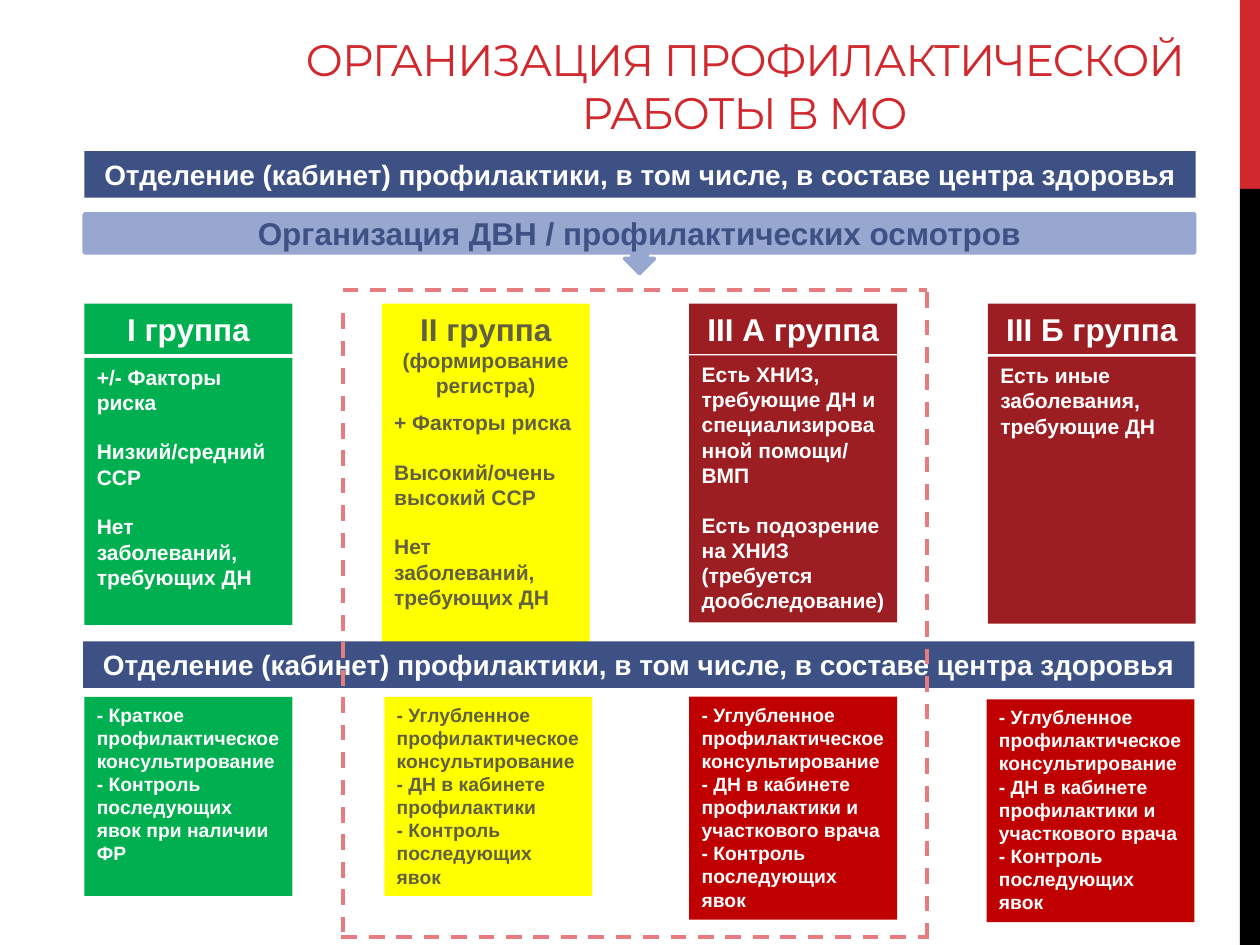
"""Builds a slide on preventive work: four patient groups and their follow-up."""
from pptx import Presentation
from pptx import util as u
from pptx.dml.color import RGBColor
from pptx.enum import dml, shapes, text
from pptx.oxml import ns
from lxml import etree

COLORS = {
    "red": "D1282E", "black": "000000", "white": "FFFFFF", "navy": "3D5185",
    "blue": "97A7D0", "green": "00B050", "yellow": "FFFF00", "olive": "616042",
    "maroon": "9D1E22", "crimson": "C00000", "pink": "E67C7F",
}
DEPARTMENT = "Отделение (кабинет) профилактики, в том числе, в составе центра здоровья"
IN_DEPTH = "- Углубленное профилактическое консультирование"
FOLLOW_UP = "- Контроль последующих явок"
DOCTOR_CARE = [IN_DEPTH, "- ДН в кабинете профилактики и участкового врача", FOLLOW_UP]
CARD_WIDTH = 1.65
GROUPS = [
    {"left": 0.67, "fill": "green", "color": "white",
     "head": [("I группа", 18)], "head_height": 0.4,
     "top": 2.84,
     "signs": ["+/- Факторы риска", "Низкий/средний ССР", "Нет заболеваний, требующих ДН"],
     "care_at": (0.67, 5.53, 1.58), "care_fill": "green",
     "care": ["- Краткое профилактическое консультирование",
              "- Контроль последующих явок при наличии ФР"]},
    {"left": 3.03, "fill": "yellow", "color": "olive",
     "head": [("II группа ", 18), ("(формирование регистра)", 12)], "head_height": 0.81,
     "top": 3.2,
     "signs": ["+ Факторы риска", "Высокий/очень высокий ССР", "Нет заболеваний, требующих ДН"],
     "care_at": (3.05, 5.53, 1.58), "care_fill": "yellow",
     "care": [IN_DEPTH, "- ДН в кабинете профилактики", FOLLOW_UP]},
    {"left": 5.47, "fill": "maroon", "color": "white",
     "head": [("III А группа", 18)], "head_height": 0.4,
     "top": 2.82,
     "signs": ["Есть ХНИЗ, требующие ДН и специализированной помощи/ ВМП",
               "Есть подозрение на ХНИЗ (требуется дообследование)"],
     "care_at": (5.47, 5.53, 1.77), "care_fill": "crimson", "care": DOCTOR_CARE},
    {"left": 7.84, "fill": "maroon", "color": "white",
     "head": [("III Б группа", 18)], "head_height": 0.4,
     "top": 2.83,
     "signs": ["Есть иные заболевания, требующие ДН"],
     "care_at": (7.83, 5.55, 1.77), "care_fill": "crimson", "care": DOCTOR_CARE},
]
FRAME = [
    (7.36, 7.45, 7.36, 2.3), (2.72, 7.4, 2.72, 2.41),
    (2.72, 2.3, 7.36, 2.3), (2.71, 7.44, 7.36, 7.44),
]


def rgb(name):
    """Return the named colour."""
    return RGBColor.from_string(COLORS[name])


def write(box, paras, *, color, size=12, font="Arial", bold=True, align=None,
          anchor=text.MSO_ANCHOR.TOP, gap=0):
    """Fill a box with paragraphs, each a string or a list of (text, size) spans."""
    frame = box.text_frame
    frame.word_wrap = True
    frame.auto_size = text.MSO_AUTO_SIZE.NONE
    frame.vertical_anchor = anchor
    for number, content in enumerate(paras):
        para = frame.add_paragraph() if number else frame.paragraphs[0]
        para.alignment = align or text.PP_ALIGN.LEFT
        para.space_before = u.Pt(gap if number else 0)
        spans = [(content, size)] if isinstance(content, str) else content
        for words, points in spans:
            span = para.add_run()
            span.text = words
            span.font.name = font
            span.font.size = u.Pt(points)
            span.font.bold = bold
            span.font.color.rgb = rgb(color)


def add_box(page, left, top, width, height, fill, kind=shapes.MSO_SHAPE.RECTANGLE):
    """Add a flat filled shape without an outline."""
    box = page.shapes.add_shape(
        kind, u.Inches(left), u.Inches(top), u.Inches(width), u.Inches(height))
    box.shadow.inherit = False
    box.fill.solid()
    box.fill.fore_color.rgb = rgb(fill)
    box.line.fill.background()
    return box


def add_title(page):
    """Place and format the title."""
    title = page.shapes.title
    title.left, title.top = u.Inches(2.09), u.Inches(0.13)
    title.width, title.height = u.Inches(7.64), u.Inches(1.02)
    write(title, ["ОРГАНИЗАЦИЯ ПРОФИЛАКТИЧЕСКОЙ РАБОТЫ В МО"], color="red", size=25.2,
          font="Montserrat", bold=False, align=text.PP_ALIGN.CENTER,
          anchor=text.MSO_ANCHOR.BOTTOM)
    span = title.text_frame.paragraphs[0].runs[0]
    span.font._element.set("spc", "-60")


def add_bar(page, left, top):
    """Add a full-width bar naming the department."""
    bar = add_box(page, left, top, 8.82, 0.37, "navy")
    write(bar, [DEPARTMENT], color="white", size=16, align=text.PP_ALIGN.CENTER)


def add_group(page, group):
    """Add the heading and the signs of one patient group."""
    head = add_box(page, group["left"], 2.41, CARD_WIDTH, group["head_height"], group["fill"])
    write(head, [group["head"]], color=group["color"], align=text.PP_ALIGN.CENTER)
    card = add_box(page, group["left"], group["top"], CARD_WIDTH, 2.12, group["fill"])
    write(card, group["signs"], color=group["color"], gap=14)


def add_care(page, group):
    """Add the card with the care given to one patient group."""
    left, top, height = group["care_at"]
    card = add_box(page, left, top, CARD_WIDTH, height, group["care_fill"])
    write(card, group["care"], color=group["color"], size=11)


def add_dashed_line(page, *ends):
    """Add one dashed side of the frame."""
    line = page.shapes.add_connector(
        shapes.MSO_CONNECTOR.STRAIGHT, *[u.Inches(end) for end in ends])
    line.line.color.rgb = rgb("pink")
    line.line.width = u.Pt(2.25)
    line.line.dash_style = dml.MSO_LINE.DASH
    etree.SubElement(line._element.spPr, ns.qn("a:effectLst"))


def add_callout(page):
    """Add the callout that points down to the groups."""
    callout = add_box(page, 0.67, 1.7, 8.81, 0.47, "blue",
                      shapes.MSO_SHAPE.DOWN_ARROW_CALLOUT)
    callout.line.color.rgb = rgb("blue")
    callout.line.width = u.Pt(2.25)
    write(callout, ["Организация ДВН / профилактических осмотров"], color="navy", size=18,
          align=text.PP_ALIGN.CENTER, anchor=text.MSO_ANCHOR.MIDDLE)


def main():
    """Build and save the slide."""
    deck = Presentation()
    deck.slide_width, deck.slide_height = u.Inches(10), u.Inches(7.5)
    page = deck.slides.add_slide(deck.slide_layouts[5])
    add_box(page, 9.84, 0, 0.16, 1.5, "red")
    add_box(page, 9.84, 1.5, 0.16, 6, "black")
    add_title(page)
    add_bar(page, 0.67, 1.2)
    for group in GROUPS:
        add_group(page, group)
    add_bar(page, 0.66, 5.09)
    for group in GROUPS:
        add_care(page, group)
    for side in FRAME:
        add_dashed_line(page, *side)
    add_callout(page)
    deck.save("out.pptx")


if __name__ == "__main__":
    main()
